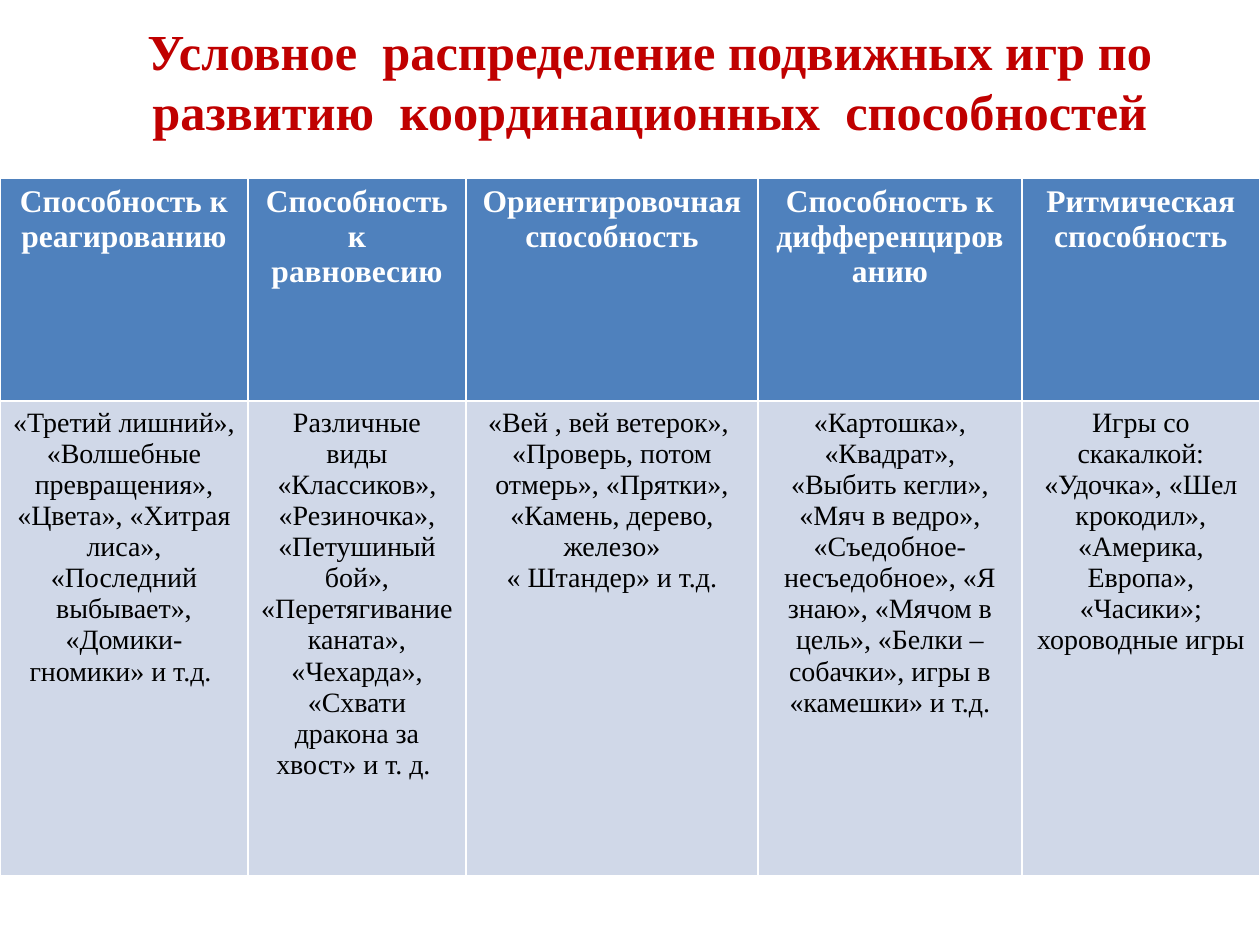
"""Builds a slide with a table of active games grouped by coordination ability."""
import pptx
import pptx.dml.color
import pptx.enum.text
import pptx.util

TITLE = "Условное  распределение подвижных игр по развитию  координационных  способностей"
ABILITIES = [
    (248, "Способность к реагированию",
     "«Третий лишний», «Волшебные превращения», «Цвета», «Хитрая лиса», "
     "«Последний выбывает», «Домики-гномики» и т.д.\t"),
    (218, "Способность к равновесию",
     "Различные виды «Классиков», «Резиночка», «Петушиный бой», «Перетягивание каната», "
     "«Чехарда», «Схвати дракона за хвост» и т. д. "),
    (292, "Ориентировочная способность",
     "«Вей , вей ветерок», \n«Проверь, потом отмерь», «Прятки», «Камень, дерево, железо»\n"
     "« Штандер» и т.д."),
    (264, "Способность к дифференцированию",
     "«Картошка», «Квадрат», «Выбить кегли», «Мяч в ведро», «Съедобное- несъедобное», "
     "«Я знаю», «Мячом в цель», «Белки – собачки», игры в «камешки» и т.д."),
    (238, "Ритмическая способность",
     "Игры со скакалкой: «Удочка», «Шел крокодил», «Америка, Европа», «Часики»; "
     "хороводные игры "),
]
ROW_HEIGHTS = (223, 475)
TABLE_TOP = 178

FONT = "Times New Roman"
RED = pptx.dml.color.RGBColor(0xC0, 0x00, 0x00)
WHITE = pptx.dml.color.RGBColor(0xFF, 0xFF, 0xFF)
BLACK = pptx.dml.color.RGBColor(0x00, 0x00, 0x00)
BLUE = pptx.dml.color.RGBColor(0x4F, 0x81, 0xBD)
PALE_BLUE = pptx.dml.color.RGBColor(0xD0, 0xD8, 0xE8)
ROW_STYLES = [(BLUE, 18, WHITE, True), (PALE_BLUE, 16, BLACK, False)]


def px(length):
    """Converts pixels to EMU."""
    return pptx.util.Emu(round(length * 914400 / 126))


def write(text_frame, text, size, color, bold):
    """Sets centred text and formats its runs."""
    text_frame.text = text
    for paragraph in text_frame.paragraphs:
        paragraph.alignment = pptx.enum.text.PP_ALIGN.CENTER
        for run in paragraph.runs:
            run.font.name = FONT
            run.font.size = pptx.util.Pt(size)
            run.font.color.rgb = color
            run.font.bold = bold


def add_title(slide):
    """Places and formats the title placeholder."""
    title = slide.shapes.title
    title.left, title.top, title.width, title.height = map(px, (69, 20, 1162, 121))
    write(title.text_frame, TITLE, 28.8, RED, True)
    title.text_frame.auto_size = pptx.enum.text.MSO_AUTO_SIZE.NONE
    title.text_frame.vertical_anchor = pptx.enum.text.MSO_ANCHOR.MIDDLE


def add_games_table(slide):
    """Adds one column per ability, with its games below the heading."""
    table_width = sum(width for width, *_ in ABILITIES)
    table = slide.shapes.add_table(
        len(ROW_HEIGHTS), len(ABILITIES),
        px(0), px(TABLE_TOP), px(table_width), px(sum(ROW_HEIGHTS))).table
    for row, height in zip(table.rows, ROW_HEIGHTS):
        row.height = px(height)
    for column, (width, *texts) in enumerate(ABILITIES):
        table.columns[column].width = px(width)
        for row, (text, style) in enumerate(zip(texts, ROW_STYLES)):
            fill, *text_style = style
            cell = table.cell(row, column)
            cell.fill.solid()
            cell.fill.fore_color.rgb = fill
            write(cell.text_frame, text, *text_style)


def main():
    """Creates and saves the presentation."""
    presentation = pptx.Presentation()
    presentation.slide_width, presentation.slide_height = px(1260), px(945)
    slide = presentation.slides.add_slide(presentation.slide_layouts[5])
    add_title(slide)
    add_games_table(slide)
    presentation.save("out.pptx")


if __name__ == "__main__":
    main()
